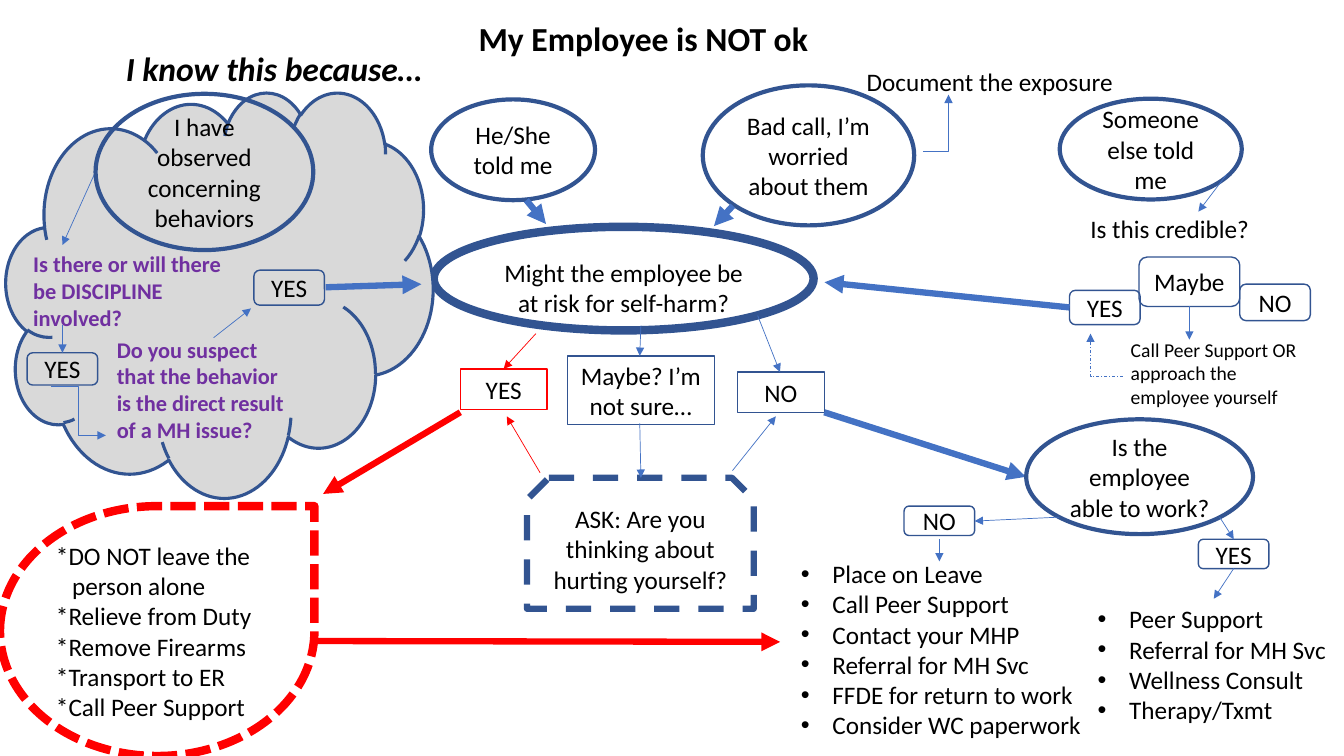
from lxml.etree import SubElement
from pptx import Presentation
from pptx.dml.color import RGBColor
from pptx.enum.dml import MSO_LINE
from pptx.enum.shapes import MSO_CONNECTOR, MSO_SHAPE
from pptx.enum.text import MSO_ANCHOR, MSO_AUTO_SIZE, PP_ALIGN
from pptx.oxml.ns import qn
from pptx.util import Pt

COLORS = {"text": "000000", "outline": "325491", "arrow": "4472C4",
          "alert": "FF0000", "cloud": "D9D9D9", "question": "7030A0"}
OVAL, RECT, ROUND = MSO_SHAPE.OVAL, MSO_SHAPE.RECTANGLE, MSO_SHAPE.ROUNDED_RECTANGLE


def rgb(name):
    return RGBColor.from_string(COLORS[name])


def place(box, at):
    """Turn a position inside a box into slide lengths."""
    return Pt(box[0] + at[0]), Pt(box[1] + at[1])


def write(tf, text, size=18, color="text", bold=False, italic=False,
          align=PP_ALIGN.LEFT, hanging=0, bullet=None):
    for i, line in enumerate(text.split("\n")):
        p = tf.paragraphs[0] if i == 0 else tf.add_paragraph()
        p.alignment = align
        if hanging:
            pPr = p._p.get_or_add_pPr()
            pPr.set("marL", str(Pt(hanging)))
            pPr.set("indent", str(-Pt(hanging)))
            if bullet:
                SubElement(pPr, qn("a:buFont"), typeface="Arial")
                SubElement(pPr, qn("a:buChar"), char=bullet)
        r = p.add_run()
        r.text = line
        r.font.name, r.font.size = "Calibri", Pt(size)
        r.font.bold, r.font.italic = bold, italic
        r.font.color.rgb = rgb(color)


def label(s, box, at, text, wrap=False, **fmt):
    sp = s.shapes.add_textbox(*place(box, at), Pt(at[2]), Pt(at[3]))
    tf = sp.text_frame
    tf.word_wrap = wrap
    tf.auto_size = MSO_AUTO_SIZE.SHAPE_TO_FIT_TEXT
    write(tf, text, **fmt)


def node(s, box, kind, at, text="", line="outline", width=1, dash=None,
         fill=None, top=3.6, align=PP_ALIGN.CENTER, **fmt):
    sp = s.shapes.add_shape(kind, *place(box, at), Pt(at[2]), Pt(at[3]))
    sp.shadow.inherit = False
    if fill:
        sp.fill.solid()
        sp.fill.fore_color.rgb = rgb(fill)
    else:
        sp.fill.background()
    sp.line.color.rgb = rgb(line)
    sp.line.width = Pt(width)
    if dash:
        sp.line.dash_style = dash
    if text:
        tf = sp.text_frame
        tf.word_wrap = True
        tf.vertical_anchor = MSO_ANCHOR.MIDDLE
        tf.margin_top = Pt(top)
        write(tf, text, align=align, **fmt)


def arrow(s, box, start, end, color="arrow", width=0.5, dash=None, bend=None):
    kind = MSO_CONNECTOR.ELBOW if bend else MSO_CONNECTOR.STRAIGHT
    cxn = s.shapes.add_connector(kind, *place(box, start), *place(box, end))
    cxn.line.color.rgb = rgb(color)
    cxn.line.width = Pt(width)
    if dash:
        cxn.line.dash_style = dash
    spPr = cxn.element.spPr
    if bend:
        spPr.find(qn("a:prstGeom")).set("prst", bend)
    SubElement(spPr.find(qn("a:ln")), qn("a:tailEnd"), type="triangle")
    SubElement(spPr, qn("a:effectLst"))


def headings(s, box):
    label(s, box, (252, 0, 252, 36), "My Employee is NOT ok", size=24, bold=True)
    label(s, box, (0, 21, 227.5, 36), "I know this because…", size=24, bold=True, italic=True)


def sources(s, box):
    for at, text in (((0, 27, 117, 72), "He/She told me"),
                     ((194, 17, 151, 100), "Bad call, I’m worried about them"),
                     ((449, 26.5, 130, 72), "Someone else told me")):
        node(s, box, OVAL, at, text, width=3)
    arrow(s, box, (68, 99), (82, 116), width=4.5)
    arrow(s, box, (215.5, 103), (202, 117.5), width=4.5)
    arrow(s, box, (351.5, 64), (369.5, 23.7), bend="bentConnector2")
    label(s, box, (304, 0, 192, 29), "Document the exposure")


def risk(s, box):
    node(s, box, OVAL, (0, 0, 271.4, 74), "Might the employee be at risk for self-harm?",
         width=6, top=15.6)
    # Answers
    node(s, box, RECT, (19, 101.5, 62, 29), "YES", line="alert")
    node(s, box, RECT, (217, 103.7, 62, 29), "NO")
    node(s, box, RECT, (95.4, 92.2, 105, 49), "Maybe? I’m not sure…")
    node(s, box, MSO_SHAPE.SNIP_2_SAME_RECTANGLE, (66.6, 179.3, 162, 93.6),
         "ASK: Are you thinking about hurting yourself?", width=4.5, dash=MSO_LINE.DASH)
    # Thin arrows between question, answers and follow-up
    for start, end, color in (((73, 76.3), (50, 101.5), "alert"),
                              ((148, 70.6), (147.2, 92.2), "arrow"),
                              ((231.4, 63.4), (247.3, 103.7), "arrow"),
                              ((147.2, 140.4), (148, 179.3), "arrow"),
                              ((76, 175.7), (52.2, 135.4), "alert"),
                              ((213.4, 174.2), (244.4, 135.4), "arrow")):
        arrow(s, box, start, end, color)
    # Ways out
    arrow(s, box, (279, 132.5), (423, 178.6), width=4.5)
    arrow(s, box, (19, 132.5), (-79, 190.8), "alert", 4.5)


def credible(s, box):
    label(s, box, (7.8, 0, 129.6, 29), "Is this credible?")
    node(s, box, ROUND, (0, 58.4, 50.4, 24.5), "YES")
    node(s, box, ROUND, (49.6, 34.6, 72, 35.3), "Maybe")
    node(s, box, ROUND, (121.6, 54, 50.4, 26), "NO")
    label(s, box, (36.6, 88.6, 133.2, 58.3),
          "Call Peer Support OR approach the employee yourself", wrap=True, size=14)
    arrow(s, box, (112.2, -24.4), (92, 2.2))
    arrow(s, box, (85.6, 69.9), (85.6, 93.6))
    arrow(s, box, (0, 70.6), (-175, 52.6), width=4.5)
    arrow(s, box, (38, 119.6), (15, 89.3), dash=MSO_LINE.DASH_DOT, bend="bentConnector2")


def able_to_work(s, box):
    node(s, box, OVAL, (168, 0, 162, 82), "Is the employee able to work?", width=3)
    node(s, box, ROUND, (291, 85.7, 50.4, 21), "YES")
    node(s, box, ROUND, (80.8, 62, 50.4, 21), "NO")
    for start, end in (((191.7, 69.9), (131.2, 72.7)), ((306.2, 69.9), (316.3, 85.7)),
                       ((316.3, 106.5), (302, 128.2)), ((106, 85.7), (106, 101.5))):
        arrow(s, box, start, end)
    # Action lists
    for at, text in (
            ((0, 95.8, 216.7, 138.2),
             "Place on Leave\nCall Peer Support\nContact your MHP\nReferral for MH Svc\n"
             "FFDE for return to work\nConsider WC paperwork"),
            ((212, 128.2, 179.3, 94.3),
             "Peer Support\nReferral for MH Svc\nWellness Consult\nTherapy/Txmt")):
        label(s, box, at, text, hanging=22.5, bullet="•")


def behaviors(s, box):
    node(s, box, MSO_SHAPE.CLOUD, (0, 0, 305, 289.5), fill="cloud", width=2.25)
    for at, text in (((12.3, 109.5, 157.7, 65.5),
                      "Is there or will there be DISCIPLINE involved?"),
                     ((72, 170.7, 135.4, 85),
                      "Do you suspect that the behavior is the direct result of a MH issue?")):
        label(s, box, at, text, wrap=True, size=16, bold=True, color="question")
    node(s, box, ROUND, (15.1, 186.5, 50.4, 23), "YES")
    node(s, box, ROUND, (177.1, 127.5, 50.4, 25), "YES")
    for start, end in (((64, 57), (40.3, 109.5)), ((40.3, 167), (40.3, 186.5)),
                       ((148.3, 175.7), (175, 154.8))):
        arrow(s, box, start, end)
    arrow(s, box, (32.4, 210.3), (71.3, 245.5), bend="bentConnector3")
    arrow(s, box, (228.3, 139.7), (296.7, 137.5), width=4.5)
    node(s, box, OVAL, (64, 1.5, 155.5, 111.6), "I have observed concerning behaviors", width=3)


def emergency(s, box):
    node(s, box, MSO_SHAPE.TEAR, (0, 0, 224.6, 178.5),
         "*DO NOT leave the person alone\n*Relieve from Duty\n*Remove Firearms\n"
         "*Transport to ER\n*Call Peer Support",
         line="alert", width=6, dash=MSO_LINE.SQUARE_DOT, align=PP_ALIGN.LEFT, hanging=11.5)
    arrow(s, box, (226.8, 96.4), (557.3, 97), "alert", 4.5)


def main():
    prs = Presentation()
    prs.slide_width, prs.slide_height = Pt(960), Pt(540)
    s = prs.slides.add_slide(prs.slide_layouts[6])
    headings(s, (82.8, 9.4))
    sources(s, (308, 44))
    risk(s, (309.8, 162))
    credible(s, (764, 149))
    able_to_work(s, (565, 299.5))
    behaviors(s, (4.3, 65.5))
    emergency(s, (0, 361.5))
    prs.save("out.pptx")


if __name__ == "__main__":
    main()
